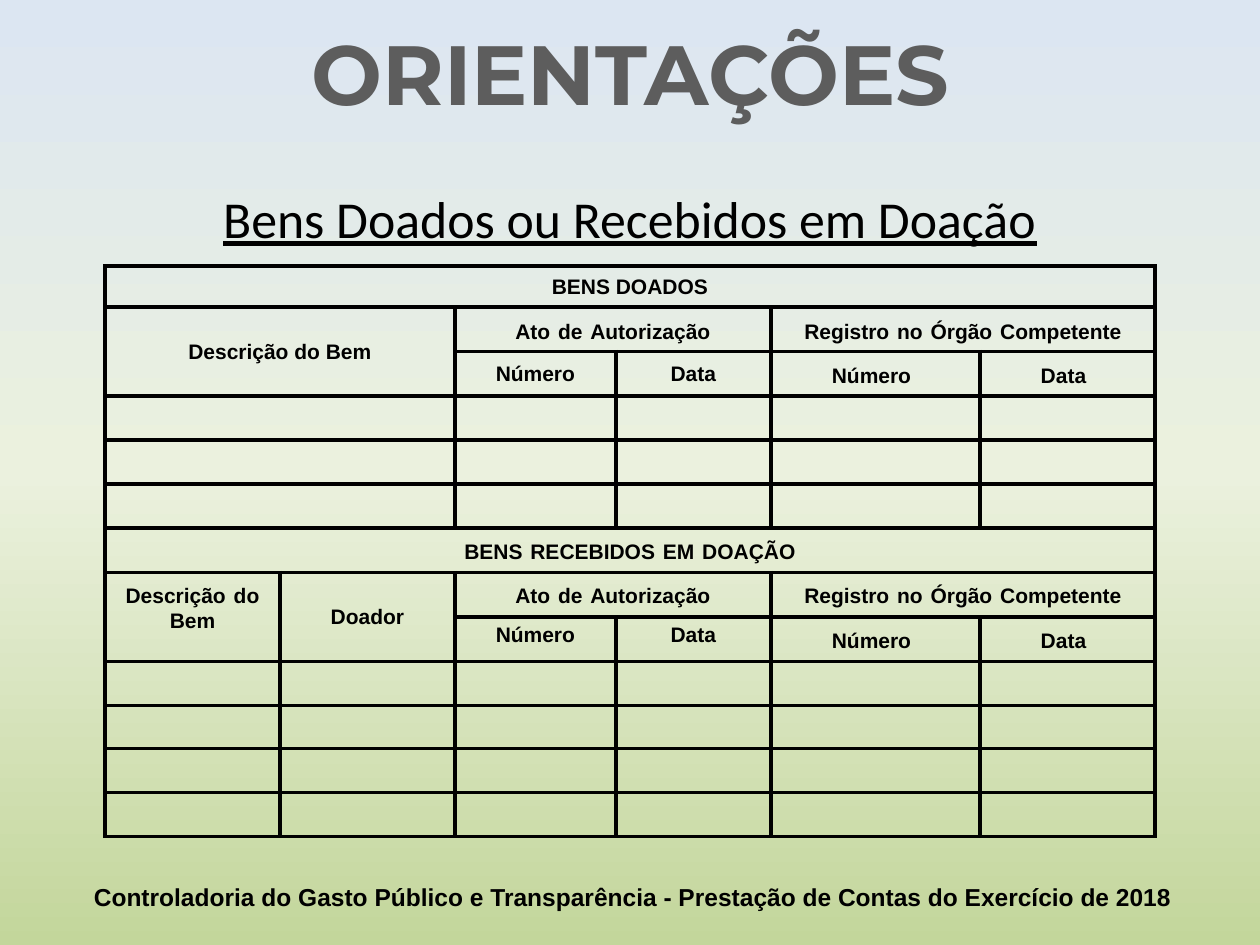
"""Build the slide with the blank forms for donated and received goods."""
from copy import deepcopy
from itertools import accumulate
from lxml.etree import SubElement, fromstring
from pptx import Presentation
from pptx.dml.color import RGBColor
from pptx.enum.text import MSO_ANCHOR, PP_ALIGN
from pptx.oxml.ns import qn
from pptx.util import Pt

PX = 914400 // 126
THEME = {
    "ink": "000000", "edge": "FFFFFF",
    "sky": [(0, "DCE6F2"), (0.5, "EBF1DE"), (1, "C3D69B")],
    "metal": [(0, "555555"), (0.49, "5D5D5D"), (0.5, "000000"), (0.95, "000000"), (1, "000000")],
    "title": 48, "sub": 29.6, "foot": 14, "cell": 12, "gap": 16,
    "rule": 2.25, "rim": 1.4,
}
TITLE = "ORIENTAÇÕES"
SUB = "Bens Doados ou Recebidos em Doação"
FOOT = "Controladoria do Gasto Público e Transparência - Prestação de Contas do Exercício de 2018"
MID, TOP = MSO_ANCHOR.MIDDLE, MSO_ANCHOR.TOP
HEADS = [
    (0, 2, 1, 2, "Ato de Autorização"),
    (0, 4, 1, 2, "Registro no Órgão Competente"),
    (1, 2, 1, 1, "Número"),
    (1, 3, 1, 1, "Data"),
    (1, 4, 1, 1, "Número "),
    (1, 5, 1, 1, "Data "),
]
CELLS = [
    (0, 0, 1, 6, "BENS DOADOS", MID, "cell"),
    (1, 0, 2, 2, "Descrição do Bem", MID, "cell"),
    (6, 0, 1, 6, "BENS RECEBIDOS EM DOAÇÃO", TOP, "gap"),
    (7, 0, 2, 1, "Descrição do Bem", TOP, "gap"),
    (7, 1, 2, 1, "Doador", MID, "gap"),
]
CELLS += [(start + row, col, tall, wide, text, anchor, "gap")
          for start, anchor in ((1, MID), (7, TOP))
          for row, col, tall, wide, text in HEADS]
CELLS += [(row, 0, 1, 2, "", MID, "cell") for row in (3, 4, 5)]
COLS = [175, 175, 161, 155, 209, 175]
LEFT, HEAD, FIRST, PITCH, COUNT = 105, 266, 41, 43.75, 13


def style(run, size, face="Arial", bold=True):
    font = run.font
    font.size, font.name, font.bold = Pt(size), face, bold
    font.color.rgb = RGBColor.from_string(THEME["ink"])


def fade(fill, root, stops):
    fill.gradient()
    fill.gradient_angle = 270
    items = root.find(".//" + qn("a:gsLst"))
    while len(items) < len(stops):
        items.append(deepcopy(items[0]))
    for stop, (place, color) in zip(fill.gradient_stops, stops):
        stop.position = place
        stop.color.rgb = RGBColor.from_string(color)


def line(tag, width, color):
    item = fromstring(f'<a:{tag} xmlns:a="http://schemas.openxmlformats.org/drawingml/2006/main"/>')
    item.set("w", str(Pt(width)))
    SubElement(SubElement(item, qn("a:solidFill")), qn("a:srgbClr")).set("val", color)
    return item


def label(slide, box, text, size, align, face="Arial", bold=True):
    shape = slide.shapes.add_textbox(*(n * PX for n in box))
    frame = shape.text_frame
    frame.word_wrap = True
    frame.text = text
    para = frame.paragraphs[0]
    para.alignment = align
    style(para.runs[0], size, face, bold)
    return shape, para.runs[0]


def grid(slide):
    ends = [0] + [round(FIRST + PITCH * n) for n in range(COUNT)]
    rows = [b - a for a, b in zip(ends, ends[1:])]
    frame = slide.shapes.add_table(
        COUNT, len(COLS), LEFT * PX, HEAD * PX, list(accumulate(COLS))[-1] * PX, ends[-1] * PX)
    table = frame.table
    table.first_row = table.horz_banding = False
    for col, wide in zip(table.columns, COLS):
        col.width = wide * PX
    for row, tall in zip(table.rows, rows):
        row.height = tall * PX
    for cell in table.iter_cells():
        cell.fill.background()
        cell.margin_left = cell.margin_right = 5 * PX
        cell.margin_top = cell.margin_bottom = 0
    for row, col, tall, wide, text, anchor, space in CELLS:
        cell = table.cell(row, col)
        if tall * wide > 1:
            cell.merge(table.cell(row + tall - 1, col + wide - 1))
        if not text:
            continue
        cell.margin_top, cell.margin_bottom = 6 * PX, 5 * PX
        cell.vertical_anchor = anchor
        para = cell.text_frame.paragraphs[0]
        para.alignment = PP_ALIGN.CENTER
        for part in filter(None, text.replace(" ", "| |").split("|")):
            run = para.add_run()
            run.text = part
            style(run, THEME[space if part == " " else "cell"])
    for props in frame.element.iter(qn("a:tcPr")):
        for spot, tag in enumerate(("lnL", "lnR", "lnT", "lnB")):
            props.insert(spot, line(tag, THEME["rule"], THEME["ink"]))


def main():
    deck = Presentation()
    deck.slide_width, deck.slide_height = 1260 * PX, 945 * PX
    slide = deck.slides.add_slide(deck.slide_layouts[6])
    fade(slide.background.fill, slide.element, THEME["sky"])
    label(slide, (58, 876, 1127, 43), FOOT, THEME["foot"], PP_ALIGN.RIGHT)
    run = label(slide, (189, 180, 882, 69), SUB, THEME["sub"], PP_ALIGN.CENTER, "Calibri", False)[1]
    run.font.underline = True
    grid(slide)
    shape, run = label(slide, (8, 15, 1245, 115), TITLE, THEME["title"], PP_ALIGN.CENTER, "Montserrat")
    fade(run.font.fill, shape.element, THEME["metal"])
    shape.element.find(".//" + qn("a:rPr")).insert(0, line("ln", THEME["rim"], THEME["edge"]))
    deck.save("out.pptx")


if __name__ == "__main__":
    main()
